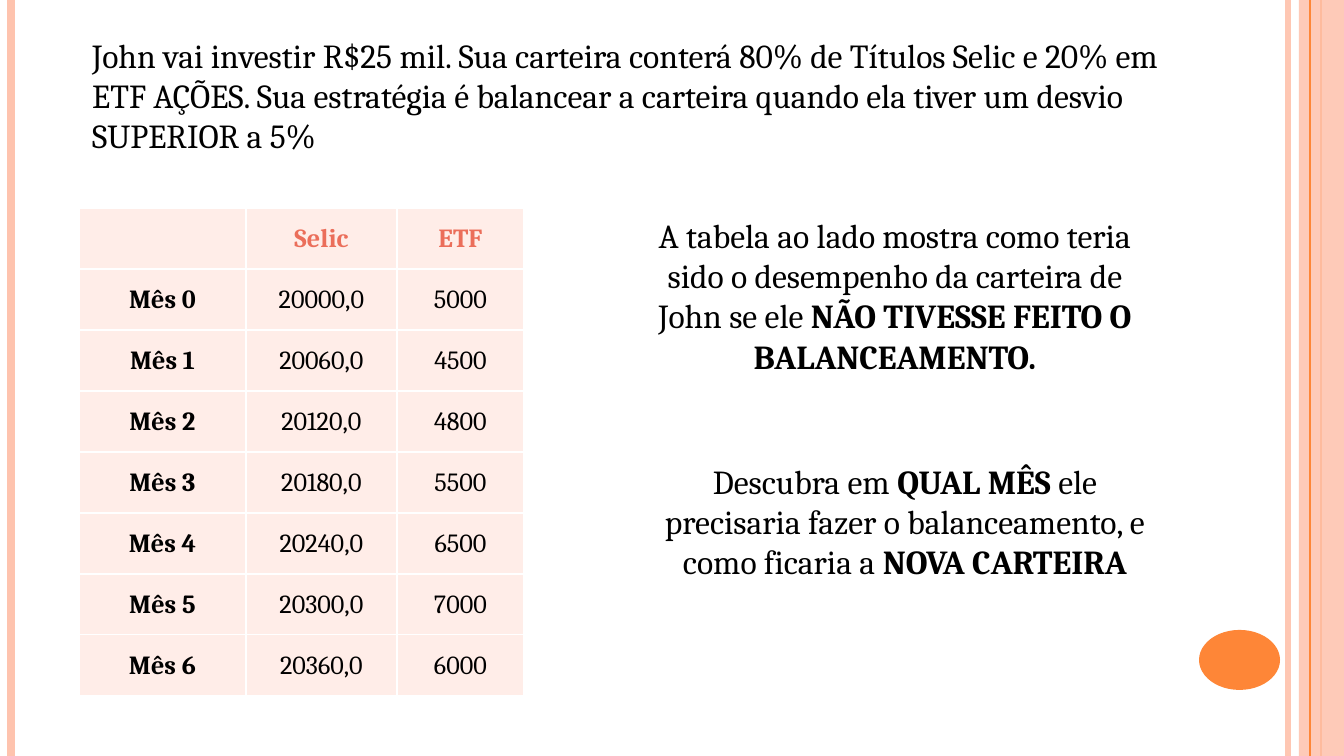
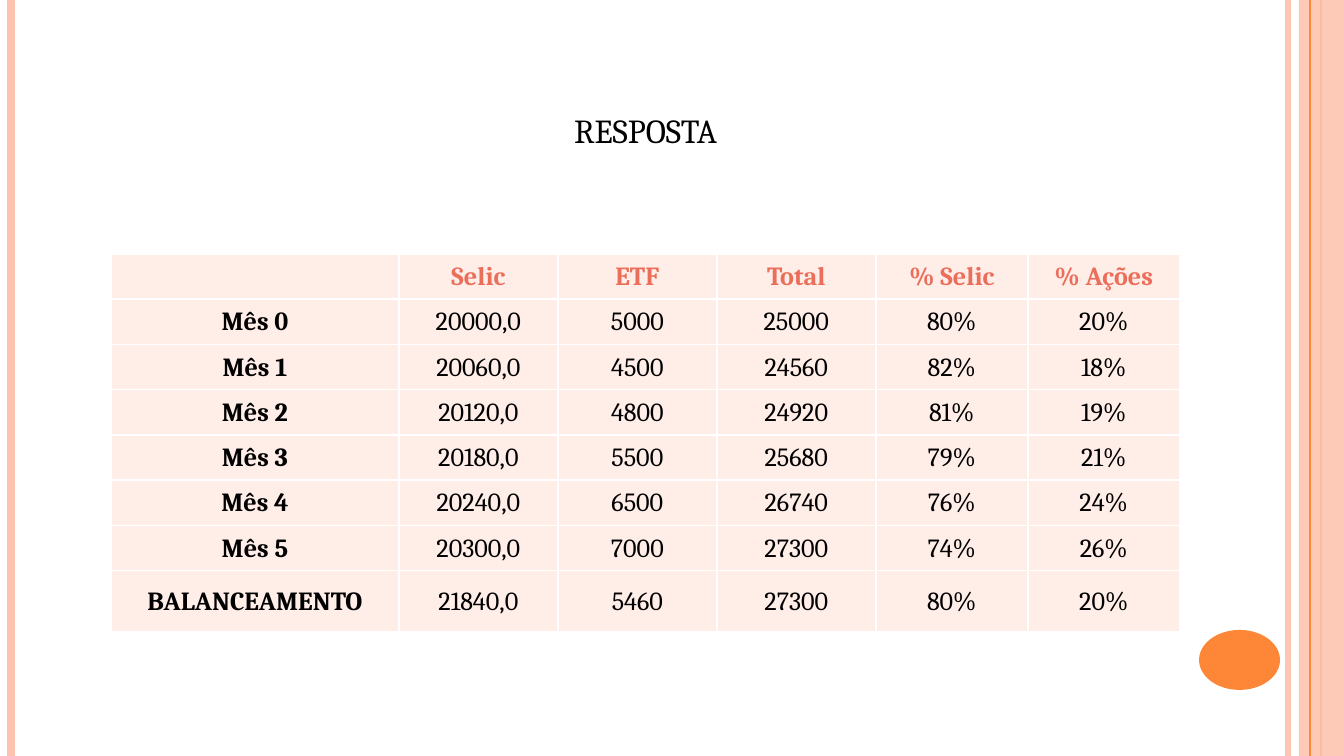
from pptx import Presentation
from pptx.dml.color import RGBColor
from pptx.enum.shapes import MSO_CONNECTOR, MSO_SHAPE
from pptx.enum.text import MSO_ANCHOR, PP_ALIGN
from pptx.oxml.ns import qn
from pptx.util import Emu, Pt
from lxml.etree import SubElement

PX = 914400 / 134.4
WIDTH, HEIGHT = 1344, 756
FONT = "Cambria"
PEACH = RGBColor(0xFE, 0xC3, 0xAE)
ORANGE = RGBColor(0xFE, 0x86, 0x37)
CORAL = RGBColor(0xEB, 0x6E, 0x5A)
CELL = RGBColor(0xFF, 0xED, 0xE8)
BLACK = RGBColor(0, 0, 0)
WHITE = RGBColor(0xFF, 0xFF, 0xFF)

PORTFOLIO = [
    ("Mês 0", "20000,0", "5000"),
    ("Mês 1", "20060,0", "4500"),
    ("Mês 2", "20120,0", "4800"),
    ("Mês 3", "20180,0", "5500"),
    ("Mês 4", "20240,0", "6500"),
    ("Mês 5", "20300,0", "7000"),
    ("Mês 6", "20360,0", "6000"),
]
SHARES = [
    ("25000", "80%", "20%"),
    ("24560", "82%", "18%"),
    ("24920", "81%", "19%"),
    ("25680", "79%", "21%"),
    ("26740", "76%", "24%"),
    ("27300", "74%", "26%"),
]
REBALANCED = ("BALANCEAMENTO", "21840,0", "5460", "27300", "80%", "20%")


def px(*lengths):
    return [Emu(round(n * PX)) for n in lengths]


def set_alpha(fill_parent, percent):
    color = fill_parent.find(qn("a:solidFill"))[0]
    SubElement(color, qn("a:alpha"), val=str(percent * 1000))


def add_rule(s, x, color, points, alpha=None):
    """Draw a vertical line over the full height of the slide."""
    line = s.shapes.add_connector(MSO_CONNECTOR.STRAIGHT, *px(x, 0, x, HEIGHT))
    line.line.color.rgb = color
    line.line.width = Pt(points)
    sp_pr = line._element.spPr
    if alpha:
        set_alpha(sp_pr.find(qn("a:ln")), alpha)
    SubElement(sp_pr, qn("a:effectLst"))


def add_filled(s, kind, box, color, alpha=None):
    sp = s.shapes.add_shape(kind, *px(*box))
    sp.shadow.inherit = False
    sp.fill.solid()
    sp.fill.fore_color.rgb = color
    sp.line.fill.background()
    if alpha:
        set_alpha(sp._element.spPr, alpha)


def add_run(p, text, size, bold=False, color=BLACK):
    r = p.add_run()
    r.text = text
    for name, value in dict(name=FONT, size=Pt(size), bold=bold).items():
        setattr(r.font, name, value)
    r.font.color.rgb = color


def add_text(s, box, *runs, align=PP_ALIGN.CENTER):
    """Add one paragraph; every second run is bold."""
    tf = s.shapes.add_textbox(*px(*box)).text_frame
    tf.word_wrap = True
    p = tf.paragraphs[0]
    p.alignment = align
    for i, text in enumerate(runs):
        add_run(p, text, 18, bold=i % 2 == 1)


def set_borders(cell):
    tc_pr = cell._tc.get_or_add_tcPr()
    for i, side in enumerate(("lnL", "lnR", "lnT", "lnB")):
        ln = tc_pr.makeelement(qn(f"a:{side}"), {"w": str(Pt(1))})
        fill = SubElement(ln, qn("a:solidFill"))
        SubElement(fill, qn("a:srgbClr"), val=str(WHITE))
        tc_pr.insert(i, ln)


def fill_cell(cell, text, bold, color):
    margins = dict(margin_left=1, margin_right=1, margin_top=1, margin_bottom=0)
    for name, value in margins.items():
        setattr(cell, name, px(value)[0])
    cell.vertical_anchor = MSO_ANCHOR.MIDDLE
    cell.fill.solid()
    cell.fill.fore_color.rgb = CELL
    set_borders(cell)
    p = cell.text_frame.paragraphs[0]
    p.alignment = PP_ALIGN.CENTER
    if text:
        add_run(p, text, 14, bold, color)


def add_table(s, left, top, widths, heights, rows):
    box = px(left, top, sum(widths), sum(heights))
    table = s.shapes.add_table(len(rows), len(widths), *box).table
    for column, width in zip(table.columns, px(*widths)):
        column.width = width
    for row, height in zip(table.rows, px(*heights)):
        row.height = height
    for i, row in enumerate(rows):
        for j, text in enumerate(row):
            fill_cell(table.cell(i, j), text, bold=i == 0 or j == 0,
                      color=BLACK if i else CORAL)


def add_base_slide(prs):
    """Add a blank slide with the side bands and the page disc."""
    s = prs.slides.add_slide(prs.slide_layouts[6])
    add_rule(s, 1288, PEACH, 3, alpha=93)
    add_rule(s, 11, PEACH, 4.5)
    add_rule(s, 1321, ORANGE, 1.5)
    add_filled(s, MSO_SHAPE.RECTANGLE, (1299, 0, 45, HEIGHT), PEACH, alpha=87)
    add_rule(s, 1310, ORANGE, 0.75)
    add_filled(s, MSO_SHAPE.OVAL, (1199, 630, 81, 60), ORANGE)
    return s


def add_question(prs):
    s = add_base_slide(prs)
    add_text(s, (79, 28, 1153, 136),
             "John vai investir R$25 mil. Sua carteira conterá 80% de Títulos "
             "Selic e 20% em ETF AÇÕES. Sua estratégia é balancear a carteira "
             "quando ela tiver um desvio SUPERIOR a 5%", align=PP_ALIGN.LEFT)
    rows = [("", "Selic", "ETF")] + PORTFOLIO
    add_table(s, 79, 208, [167, 151, 127], [61] * len(rows), rows)
    add_text(s, (630, 208, 530, 218),
             "A tabela ao lado mostra como teria sido o desempenho da carteira "
             "de John se ele ", "NÃO TIVESSE FEITO O BALANCEAMENTO.")
    add_text(s, (640, 454, 530, 176),
             "Descubra em ", "QUAL MÊS ",
             "ele precisaria fazer o balanceamento, e como ficaria a ",
             "NOVA CARTEIRA")


def add_answer(prs):
    s = add_base_slide(prs)
    months = [month + share for month, share in zip(PORTFOLIO, SHARES)]
    header = ("", "Selic", "ETF", "Total", "% Selic", "% Ações")
    rows = [header, *months, REBALANCED]
    add_table(s, 111, 254, [288, 159, 159, 159, 152, 152],
              [45.25] * (len(rows) - 1) + [61], rows)
    add_text(s, (270, 103, 751, 54), "RESPOSTA")


def main():
    prs = Presentation()
    prs.slide_width, prs.slide_height = px(WIDTH, HEIGHT)
    add_question(prs)
    add_answer(prs)
    prs.save("out.pptx")


if __name__ == "__main__":
    main()
